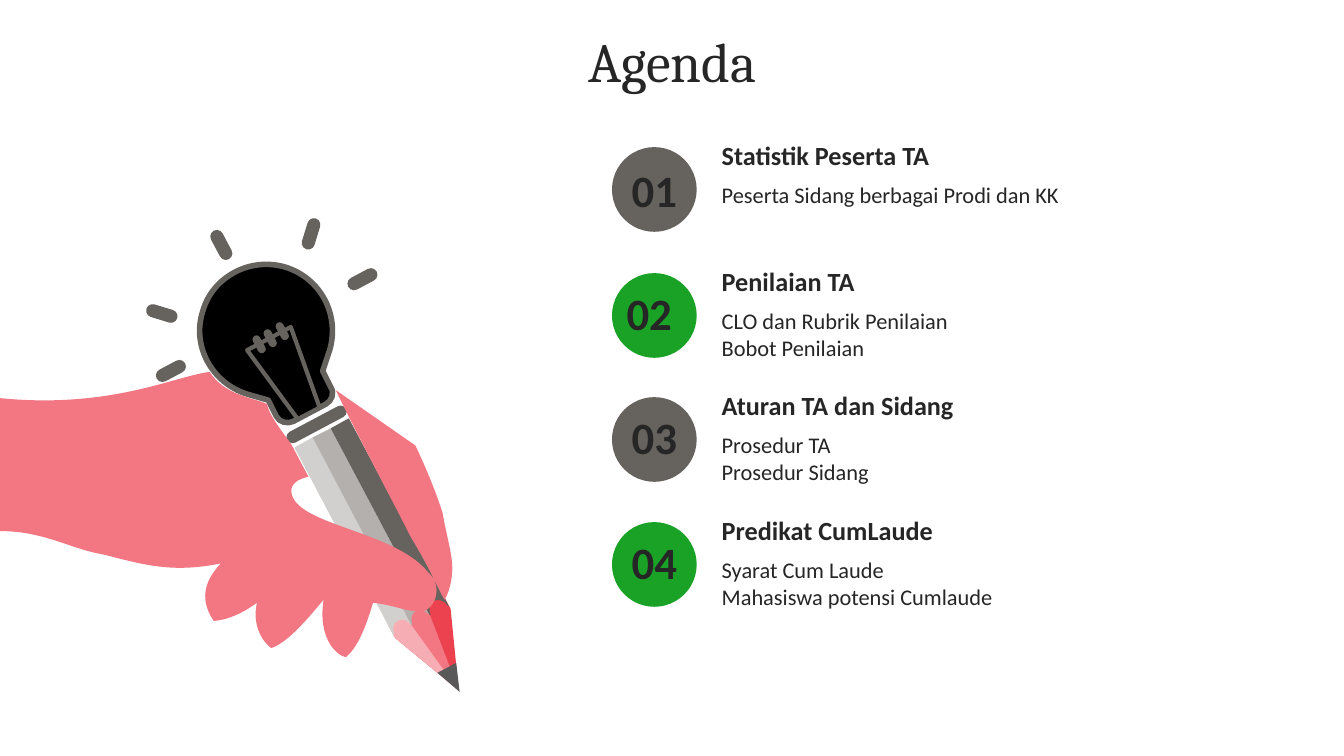
from math import cos, radians, sin

from lxml import etree
from pptx import Presentation
from pptx.dml.color import RGBColor
from pptx.enum.shapes import MSO_SHAPE
from pptx.enum.text import MSO_ANCHOR, PP_ALIGN
from pptx.oxml.ns import qn
from pptx.util import Inches, Pt

OVAL = MSO_SHAPE.OVAL
ROUNDED = MSO_SHAPE.ROUNDED_RECTANGLE
TRIANGLE = MSO_SHAPE.ISOSCELES_TRIANGLE
TRAPEZOID = MSO_SHAPE.TRAPEZOID
LEFT, CENTER = PP_ALIGN.LEFT, PP_ALIGN.CENTER
TOP, MIDDLE = MSO_ANCHOR.TOP, MSO_ANCHOR.MIDDLE

INK = RGBColor(0x26, 0x26, 0x26)
BLACK = RGBColor(0x00, 0x00, 0x00)
GRAY = RGBColor(0x66, 0x62, 0x5E)
MID_GRAY = RGBColor(0xB4, 0xB0, 0xAD)
LIGHT_GRAY = RGBColor(0xD2, 0xD0, 0xCE)
LEAD = RGBColor(0x59, 0x59, 0x59)
GREEN = RGBColor(0x19, 0xA2, 0x26)
RED = RGBColor(0xEC, 0x41, 0x4F)
CORAL = RGBColor(0xF2, 0x77, 0x82)
PINK = RGBColor(0xF7, 0xAD, 0xB4)

PENCIL_TILT, BULB_TILT = 332, 107

# Outlines in inches: M starts a contour, L is a line, C a cubic curve
PENCIL = [
    (RED, "M 3.85 6.2 L 4.4 5.91 L 4.47 6.04 L 4.55 6.85 L 3.92 6.33"),
    (CORAL, "M 4.03 6.1 L 4.21 6 L 4.26 6.09 L 4.55 6.85 L 4.09 6.23"),
    (PINK, "M 3.85 6.2 L 4.03 6.1 C 4.05 6.13 4.07 6.17 4.08 6.2 "
           "L 4.54 6.84 L 3.92 6.33"),
    (LIGHT_GRAY, "M 2.92 4.44 L 3.1 4.34 L 4.08 6.2 C 4.04 6.15 3.99 6.13 3.94 6.16 "
                 "C 3.9 6.18 3.89 6.24 3.91 6.29 L 3.9 6.3"),
    (MID_GRAY, "M 3.1 4.34 L 3.28 4.25 L 4.26 6.1 C 4.22 6.06 4.17 6.04 4.13 6.06 "
               "C 4.08 6.08 4.07 6.14 4.09 6.2 L 4.08 6.2"),
    (GRAY, "M 3.28 4.25 L 3.46 4.15 L 4.45 6.01 L 4.44 6.01 "
           "C 4.41 5.96 4.35 5.94 4.31 5.96 C 4.26 5.99 4.25 6.04 4.27 6.1 L 4.26 6.1"),
]
BULB = (
    "M 2.33 2.7 C 2.48 2.62 2.66 2.6 2.83 2.65 C 3.18 2.76 3.37 3.12 3.27 3.47 "
    "L 3.2 3.68 L 3.28 3.84 C 3.32 3.9 3.29 3.98 3.23 4.01 L 3.08 4.09 L 2.91 4.18 "
    "C 2.85 4.21 2.77 4.19 2.74 4.13 L 2.66 3.97 C 2.59 3.95 2.52 3.93 2.45 3.91 "
    "C 2.1 3.8 1.9 3.43 2.01 3.09 C 2.06 2.91 2.18 2.78 2.33 2.7"
)
HAND = (
    "M 3.33 3.87 L 4.12 4.42 C 4.23 4.65 4.33 4.9 4.39 5.09 "
    "C 4.42 5.27 4.46 5.4 4.48 5.55 C 4.5 5.68 4.47 5.85 4.41 5.95 "
    "C 4.35 5.86 4.29 5.68 4.08 5.34 C 3.91 5 3.52 4.27 3.33 3.87 "
    "M 2.08 3.69 C 2.23 3.93 2.54 3.95 2.65 4.01 C 2.67 4.13 2.83 4.32 2.89 4.41 "
    "C 2.96 4.54 3 4.62 3.06 4.73 C 2.96 4.75 2.88 4.8 2.89 4.88 "
    "C 2.92 5.21 3.9 5.26 4.24 5.67 C 4.41 5.82 4.31 6.05 4.18 6.07 "
    "C 3.99 6.06 3.94 6.01 3.7 5.98 C 3.62 6.25 3.54 6.43 3.43 6.52 "
    "C 3.33 6.5 3.15 6.32 3.21 5.95 C 3.09 6.09 2.87 6.37 2.69 6.43 "
    "C 2.55 6.32 2.51 6.13 2.55 5.98 C 2.44 6.06 2.28 6.15 2.12 6.16 "
    "C 1.95 5.91 2.07 5.72 2.19 5.59 C 1.7 5.69 1.42 5.6 1.02 5.5 "
    "C 0.71 5.45 0.42 5.26 -0.02 5.27 L 0 3.95 C 1.1 4.06 1.74 3.73 2.08 3.69"
)

# Left, top, width, height, rotation
RAYS = [
    (3.02, 2.16, 0.13, 0.32, 17),
    (1.54, 2.95, 0.13, 0.32, 287),
    (2.13, 2.27, 0.13, 0.32, 332),
    (3.53, 2.61, 0.13, 0.32, 62),
    (1.63, 3.52, 0.13, 0.32, 242),
]
COLLAR = (2.81, 4.15, 0.66, 0.12, 332)
FILAMENT = [(2.53, 3.32, 0.08, 0.19, 332), (2.64, 3.26, 0.08, 0.19, 332),
            (2.76, 3.19, 0.08, 0.19, 332)]

# Circle top and color, number with its left and top, heading, details
AGENDA = [
    (1.46, GRAY, "01", 6.02, 1.57, "Statistik Peserta TA",
     "Peserta Sidang berbagai Prodi dan KK"),
    (2.71, GREEN, "02", 5.97, 2.79, "Penilaian TA",
     "CLO dan Rubrik Penilaian\vBobot Penilaian"),
    (3.94, GRAY, "03", 6.02, 4.02, "Aturan TA dan Sidang",
     "Prosedur TA\vProsedur Sidang"),
    (5.18, GREEN, "04", 6.02, 5.26, "Predikat CumLaude",
     "Syarat Cum Laude\vMahasiswa potensi Cumlaude"),
]


def paint(shape, fill, line=None, line_width=0):
    shape.shadow.inherit = False
    shape.fill.solid()
    shape.fill.fore_color.rgb = fill
    if line is None:
        shape.line.fill.background()
    else:
        shape.line.color.rgb = line
        shape.line.width = Pt(line_width)


def add_preset(page, kind, place, fill, line=None, line_width=0):
    left, top, width, height, rotation = place
    shape = page.shapes.add_shape(kind, Inches(left), Inches(top), Inches(width), Inches(height))
    shape.rotation = rotation
    if kind == ROUNDED:
        shape.adjustments[0] = 0.5
    paint(shape, fill, line, line_width)


def turn(x, y, degrees):
    angle = radians(degrees)
    return x * cos(angle) - y * sin(angle), x * sin(angle) + y * cos(angle)


def read_outline(outline, rotation):
    """Return the commands and the contours, turned back to the upright frame."""
    commands, contours = [], []
    tokens = iter(outline.split())
    for command in tokens:
        commands.append(command)
        if command == "M":
            contours.append([])
        for _ in range(3 if command == "C" else 1):
            x, y = Inches(float(next(tokens))), Inches(float(next(tokens)))
            contours[-1].append(turn(x, y, -rotation))
    return commands, contours


def bend_curves(shape, commands):
    """Join each curve's three line segments into one cubic segment."""
    steps = iter(list(shape.element.iter(qn("a:moveTo"), qn("a:lnTo"))))
    for command in commands:
        step = next(steps)
        if command == "C":
            curve = etree.Element(qn("a:cubicBezTo"))
            step.addprevious(curve)
            for segment in (step, next(steps), next(steps)):
                curve.append(segment[0])
                segment.getparent().remove(segment)


def add_outline(page, outline, fill, rotation=0, line=None, line_width=0):
    commands, contours = read_outline(outline, rotation)
    builder = page.shapes.build_freeform(*contours[0][0], scale=1.0)
    for index, points in enumerate(contours):
        if index:
            builder.move_to(*points[0])
        builder.add_line_segments(points[1:], close=True)
    shape = builder.convert_to_shape()
    bend_curves(shape, commands)
    center_x, center_y = turn(shape.left + shape.width / 2, shape.top + shape.height / 2, rotation)
    shape.left = round(center_x - shape.width / 2)
    shape.top = round(center_y - shape.height / 2)
    shape.rotation = rotation
    paint(shape, fill, line, line_width)


def add_text(page, place, text, size, font="Calibri", bold=False, align=LEFT, anchor=TOP):
    box = page.shapes.add_textbox(*(Inches(length) for length in place))
    frame = box.text_frame
    frame.word_wrap = True
    frame.vertical_anchor = anchor
    para = frame.paragraphs[0]
    para.text = text
    para.alignment = align
    for span in para.runs:
        span.font.name = font
        span.font.size = Pt(size)
        span.font.bold = bold
        span.font.color.rgb = INK
    return box


def add_illustration(page):
    for color, outline in PENCIL:
        add_outline(page, outline, color, PENCIL_TILT)
    add_preset(page, TRIANGLE, (4.39, 6.61, 0.21, 0.27, 152), LEAD)
    add_outline(page, BULB, BLACK, BULB_TILT, GRAY, 4)
    add_preset(page, TRAPEZOID, (2.62, 3.31, 0.49, 0.84, 152), BLACK, GRAY, 3)
    for place in RAYS + [COLLAR] + FILAMENT:
        add_preset(page, ROUNDED, place, GRAY)
    add_outline(page, HAND, CORAL)


def add_agenda_row(page, top, color, number, number_left, number_top, heading, details):
    add_preset(page, OVAL, (6.07, top, 0.84, 0.84, 0), color)
    add_text(page, (number_left, number_top, 0.94, 0.64), number, 32, bold=True, align=CENTER)
    details_height = 0.64 if "\v" in details else 0.37
    add_text(page, (7.06, top + 0.29, 5.35, details_height), details, 16)
    add_text(page, (7.06, top - 0.13, 5.35, 0.42), heading, 18.7, bold=True)


def main():
    deck = Presentation()
    deck.slide_width, deck.slide_height = Inches(13.33), Inches(7.5)
    page = deck.slides.add_slide(deck.slide_layouts[6])

    # Title, raised within its box by the bottom margin
    title = add_text(page, (0.67, 0.3, 12, 1.25), "Agenda", 39.6, "Cambria",
                     align=CENTER, anchor=MIDDLE)
    title.text_frame.margin_bottom = Inches(0.7)

    # Hand with the light-bulb pencil
    add_illustration(page)

    # Numbered agenda
    for row in AGENDA:
        add_agenda_row(page, *row)

    deck.save("out.pptx")


if __name__ == "__main__":
    main()
